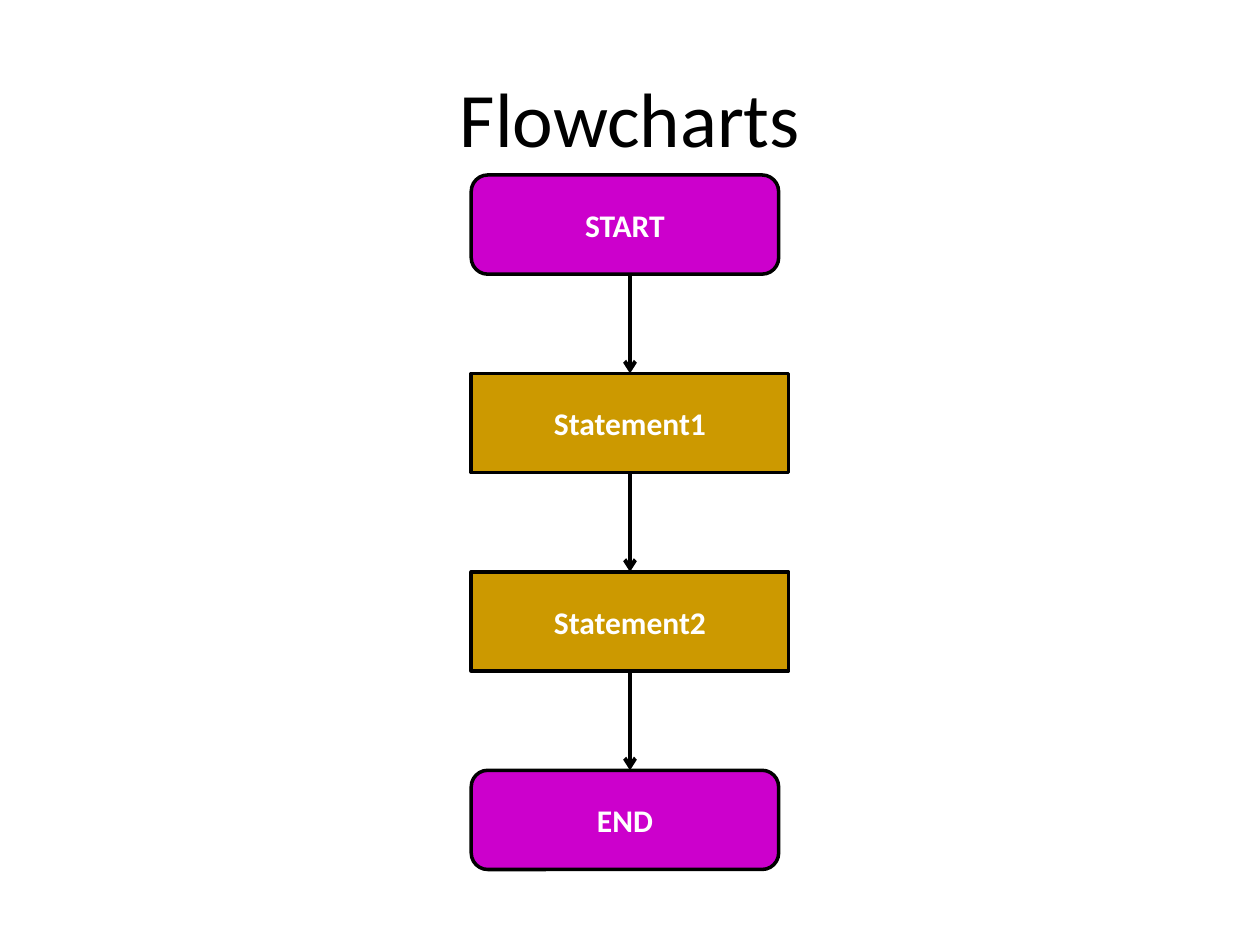
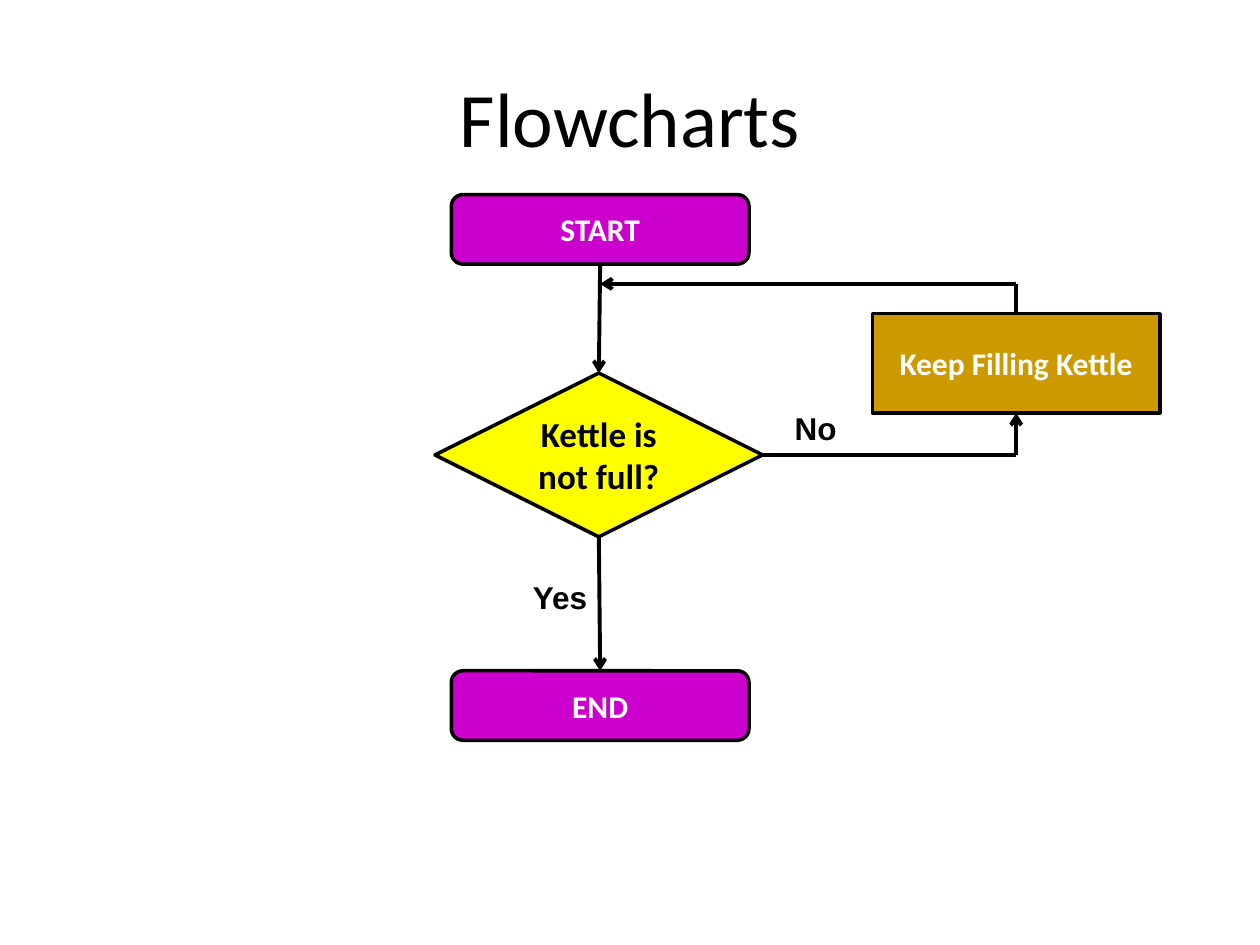
from dataclasses import dataclass
from typing import Union

from lxml import etree
from pptx import Presentation
from pptx.dml.color import RGBColor
from pptx.enum.shapes import MSO_CONNECTOR, MSO_SHAPE
from pptx.enum.text import MSO_ANCHOR, PP_ALIGN
from pptx.oxml.ns import qn
from pptx.shapes.autoshape import Shape
from pptx.slide import Slide
from pptx.util import Pt

STRAIGHT = MSO_CONNECTOR.STRAIGHT
ROUNDED, RECTANGLE, DIAMOND = (
    MSO_SHAPE.ROUNDED_RECTANGLE, MSO_SHAPE.RECTANGLE, MSO_SHAPE.DIAMOND)
MIDDLE, CENTER = MSO_ANCHOR.MIDDLE, PP_ALIGN.CENTER
TOP, BOTTOM, RIGHT = 0, 2, 3
TITLE_ONLY = 5

BLACK, WHITE = "000000", "FFFFFF"
MAGENTA, OCHRE, YELLOW = "CC00CC", "CC9900", "FFFF00"
BODY_FONT, LABEL_FONT = "Calibri", "Arial"


@dataclass(frozen=True)
class BoxStyle:
    preset: MSO_SHAPE
    fill: str
    text_color: str = WHITE
    size: int = 18


TERMINAL = BoxStyle(ROUNDED, MAGENTA)
PROCESS = BoxStyle(RECTANGLE, OCHRE)
DECISION = BoxStyle(DIAMOND, YELLOW, BLACK, 20)


@dataclass(frozen=True)
class Box:
    """A flowchart symbol, measured in points."""
    text: str
    style: BoxStyle
    left: float
    top: float
    width: float
    height: float


@dataclass(frozen=True)
class Port:
    """The middle of one side of a symbol."""
    shape: Shape
    side: int


@dataclass(frozen=True)
class Point:
    x: float
    y: float


LinkEnd = Union[Port, Point]


def rgb(color: str) -> RGBColor:
    return RGBColor.from_string(color)


def set_font(p, name: str, size: int, color: str, bold: bool = True) -> None:
    p.font.name = name
    p.font.size = Pt(size)
    p.font.bold = bold
    p.font.color.rgb = rgb(color)


def add_flowchart_slide(prs) -> Slide:
    s = prs.slides.add_slide(prs.slide_layouts[TITLE_ONLY])
    title = s.shapes.title
    title.left, title.top, title.width, title.height = (
        Pt(36), Pt(21.6), Pt(648), Pt(90))
    tf = title.text_frame
    tf.text = "Flowcharts"
    tf.vertical_anchor = MIDDLE
    p = tf.paragraphs[0]
    p.alignment = CENTER
    set_font(p, BODY_FONT, 44, BLACK, bold=False)
    return s


def draw_box(s: Slide, box: Box) -> Shape:
    style = box.style
    sp = s.shapes.add_shape(style.preset, Pt(box.left), Pt(box.top),
                            Pt(box.width), Pt(box.height))
    sp.shadow.inherit = False
    sp.fill.solid()
    sp.fill.fore_color.rgb = rgb(style.fill)
    sp.line.color.rgb = rgb(BLACK)
    sp.line.width = Pt(2)
    tf = sp.text_frame
    tf.word_wrap = True
    tf.vertical_anchor = MIDDLE
    p = tf.paragraphs[0]
    p.text = box.text
    p.alignment = CENTER
    set_font(p, BODY_FONT, style.size, style.text_color)
    return sp


def draw_label(s: Slide, text: str, left: float, top: float,
               width: float) -> None:
    sp = s.shapes.add_textbox(Pt(left), Pt(top), Pt(width), Pt(29))
    tf = sp.text_frame
    tf.word_wrap = True
    p = tf.paragraphs[0]
    p.text = text
    set_font(p, LABEL_FONT, 18, BLACK)


def draw_link(s: Slide, start: LinkEnd, end: LinkEnd,
              arrow: bool = True) -> None:
    link = s.shapes.add_connector(STRAIGHT, 0, 0, 0, 0)
    if isinstance(start, Port):
        link.begin_connect(start.shape, start.side)
    else:
        link.begin_x, link.begin_y = Pt(start.x), Pt(start.y)
    if isinstance(end, Port):
        link.end_connect(end.shape, end.side)
    else:
        link.end_x, link.end_y = Pt(end.x), Pt(end.y)
    link.line.color.rgb = rgb(BLACK)
    link.line.width = Pt(2.25)
    if arrow:
        ln = link.line._get_or_add_ln()
        etree.SubElement(ln, qn("a:tailEnd"), type="arrow")
    etree.SubElement(link._element.spPr, qn("a:effectLst"))


def build_sequence(prs) -> None:
    s = add_flowchart_slide(prs)
    left, first_top, height = 269.3, 100, 56.7
    steps = [("START", TERMINAL), ("Statement1", PROCESS),
             ("Statement2", PROCESS), ("END", TERMINAL)]
    shapes = []
    for i, (text, style) in enumerate(steps):
        width = 181.4 if style is PROCESS else 175.7
        top = first_top + i * 2 * height
        shapes.append(draw_box(s, Box(text, style, left, top, width, height)))

    axis = 360
    for i, (upper, lower) in enumerate(zip(shapes, shapes[1:])):
        bottom = first_top + (2 * i + 1) * height
        start = (Port(upper, BOTTOM) if steps[i][1] is PROCESS
                 else Point(axis, bottom))
        end = (Port(lower, TOP) if steps[i + 1][1] is PROCESS
               else Point(axis, bottom + height))
        draw_link(s, start, end)


def build_loop(prs) -> None:
    s = add_flowchart_slide(prs)
    start, end = (draw_box(s, Box(text, TERMINAL, 257.9, top, 170.1, 39.7))
                  for text, top in (("START", 111.2), ("END", 383.3)))
    decision = draw_box(
        s, Box("Kettle is not full?", DECISION, 248.6, 213.2, 187.2, 93.6))
    filling = draw_box(
        s, Box("Keep Filling Kettle", PROCESS, 498.5, 179.3, 164.4, 56.7))

    draw_label(s, "No", 447, 230.4, 45.4)
    draw_label(s, "Yes", 297.4, 327, 73.4)

    draw_link(s, Port(start, BOTTOM), Port(decision, TOP))
    draw_link(s, Port(decision, BOTTOM), Port(end, TOP))

    loop_x = 580.7
    no_corner = Point(loop_x, 260)
    return_corner = Point(loop_x, 162.2)
    draw_link(s, Port(decision, RIGHT), no_corner, arrow=False)
    draw_link(s, no_corner, Port(filling, BOTTOM))
    draw_link(s, Port(filling, TOP), return_corner, arrow=False)
    draw_link(s, return_corner, Point(343, return_corner.y))


def main() -> None:
    prs = Presentation()
    prs.slide_width, prs.slide_height = Pt(720), Pt(540)
    build_sequence(prs)
    build_loop(prs)
    prs.save("out.pptx")


if __name__ == "__main__":
    main()
